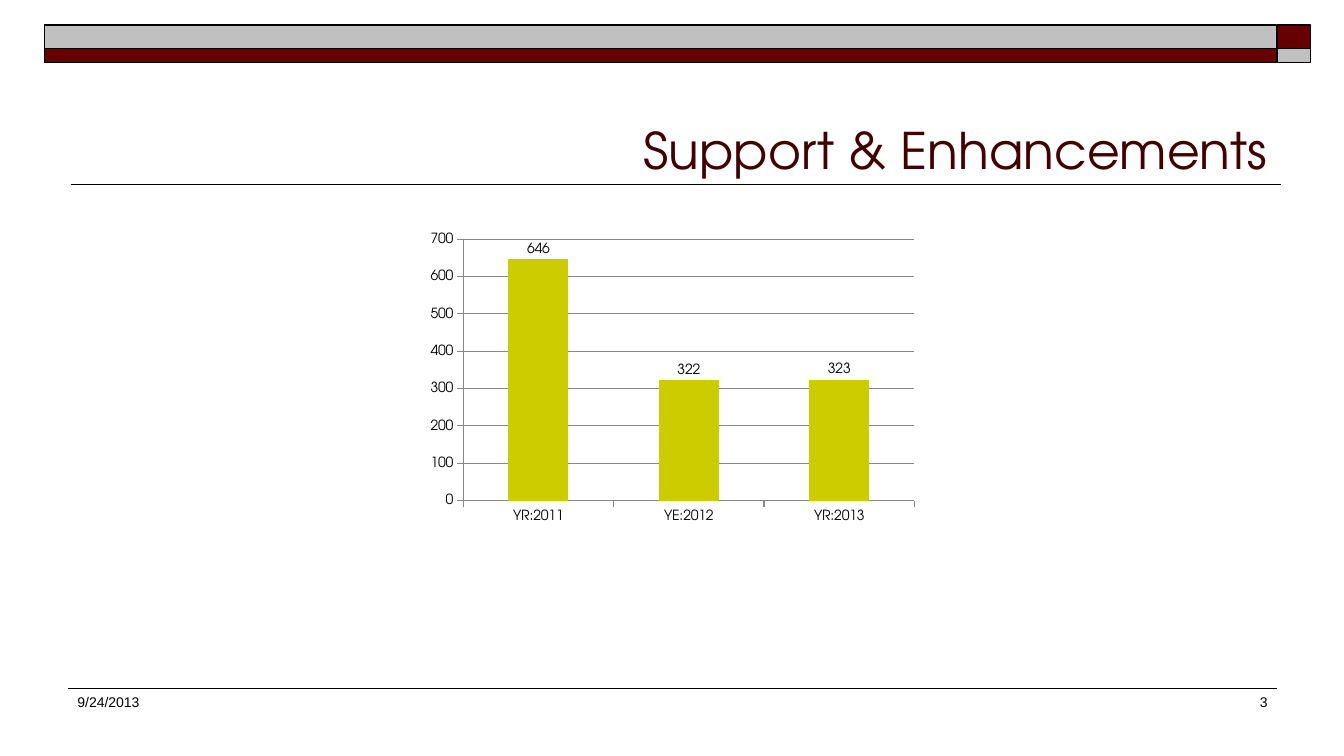
import pptx
import pptx.util
import pptx.chart.data
from pptx.dml.color import RGBColor
from pptx.enum.chart import XL_CHART_TYPE, XL_LABEL_POSITION, XL_TICK_MARK
from pptx.enum.shapes import MSO_CONNECTOR, MSO_SHAPE
from pptx.enum.text import MSO_ANCHOR, PP_ALIGN
from pptx.oxml.ns import qn
import lxml.etree

Inches = pptx.util.Inches
Pt = pptx.util.Pt
HEAD_FONT = "TeX Gyre Adventor"
BLACK, MAROON, SILVER, GRID = "000000", "660000", "C0C0C0", "878787"


def color(value):
    return RGBColor.from_string(value)


def add_bar(s, x, y, w, h, fill):
    sp = s.shapes.add_shape(
        MSO_SHAPE.RECTANGLE, Inches(x), Inches(y), Inches(w), Inches(h))
    sp.shadow.inherit = False
    sp.fill.solid()
    sp.fill.fore_color.rgb = color(fill)
    sp.line.color.rgb = color(BLACK)
    sp.line.width = Pt(1)


def add_rule(s, x1, x2, y, width):
    sp = s.shapes.add_connector(
        MSO_CONNECTOR.STRAIGHT, Inches(x1), Inches(y), Inches(x2), Inches(y))
    sp.line.color.rgb = color(BLACK)
    sp.line.width = Pt(width)
    lxml.etree.SubElement(sp._element.spPr, qn("a:effectLst"))


def add_text(s, x, y, w, h, text, size, font="Arial", fill=BLACK,
             align=PP_ALIGN.LEFT, anchor=MSO_ANCHOR.TOP):
    sp = s.shapes.add_textbox(Inches(x), Inches(y), Inches(w), Inches(h))
    tf = sp.text_frame
    tf.word_wrap = True
    tf.vertical_anchor = anchor
    p = tf.paragraphs[0]
    p.alignment = align
    r = p.add_run()
    r.text = text
    r.font.size = Pt(size)
    r.font.name = font
    r.font.color.rgb = color(fill)


def style_axis(axis):
    axis.major_tick_mark = XL_TICK_MARK.OUTSIDE
    axis.minor_tick_mark = XL_TICK_MARK.NONE
    axis.format.line.color.rgb = color(GRID)
    axis.format.line.width = Pt(0.75)


def add_column_chart(s, x, y, w, h, cats, vals, fill):
    data = pptx.chart.data.CategoryChartData()
    data.categories = cats
    data.add_series("Series 1", vals)
    chart = s.shapes.add_chart(
        XL_CHART_TYPE.COLUMN_CLUSTERED,
        Inches(x), Inches(y), Inches(w), Inches(h), data).chart
    chart.has_title = False
    chart.has_legend = False
    chart.font.size = Pt(10)
    chart.font.name = HEAD_FONT
    chart.font.color.rgb = color(BLACK)

    style_axis(chart.category_axis)
    style_axis(chart.value_axis)
    chart.value_axis.minimum_scale = 0
    chart.value_axis.maximum_scale = 700
    chart.value_axis.major_unit = 100
    chart.value_axis.has_major_gridlines = True
    grid = chart.value_axis.major_gridlines.format.line
    grid.color.rgb = color(GRID)
    grid.width = Pt(0.75)

    plot = chart.plots[0]
    plot.gap_width = 150
    plot.vary_by_categories = False
    plot.has_data_labels = True
    plot.data_labels.show_value = True
    plot.data_labels.position = XL_LABEL_POSITION.OUTSIDE_END
    columns = plot.series[0].format.fill
    columns.solid()
    columns.fore_color.rgb = color(fill)


def main():
    prs = pptx.Presentation()
    prs.slide_width = Inches(13.33)
    prs.slide_height = Inches(7.5)
    s = prs.slides.add_slide(prs.slide_layouts[6])

    add_rule(s, 0.7, 12.71, 1.83, 1)
    for y, h, long_fill, short_fill in ((0.25, 0.23, SILVER, MAROON),
                                        (0.48, 0.14, MAROON, SILVER)):
        add_bar(s, 12.67, y, 0.33, h, short_fill)
        add_bar(s, 0.44, y, 12.22, h, long_fill)
    add_rule(s, 0.67, 12.67, 6.83, 0.75)

    add_text(s, 0.67, 0.58, 12, 1.25, "Support & Enhancements", 36,
             HEAD_FONT, "420000", PP_ALIGN.RIGHT, MSO_ANCHOR.BOTTOM)
    add_text(s, 0.67, 6.83, 2.44, 0.5, "9/24/2013", 10)
    add_text(s, 9.89, 6.83, 2.78, 0.5, "3", 10, align=PP_ALIGN.RIGHT)
    add_column_chart(s, 4.17, 2.25, 5, 3,
                     ("YR:2011", "YE:2012", "YR:2013"), (646, 322, 323),
                     "CCCC00")
    prs.save("out.pptx")


if __name__ == "__main__":
    main()
